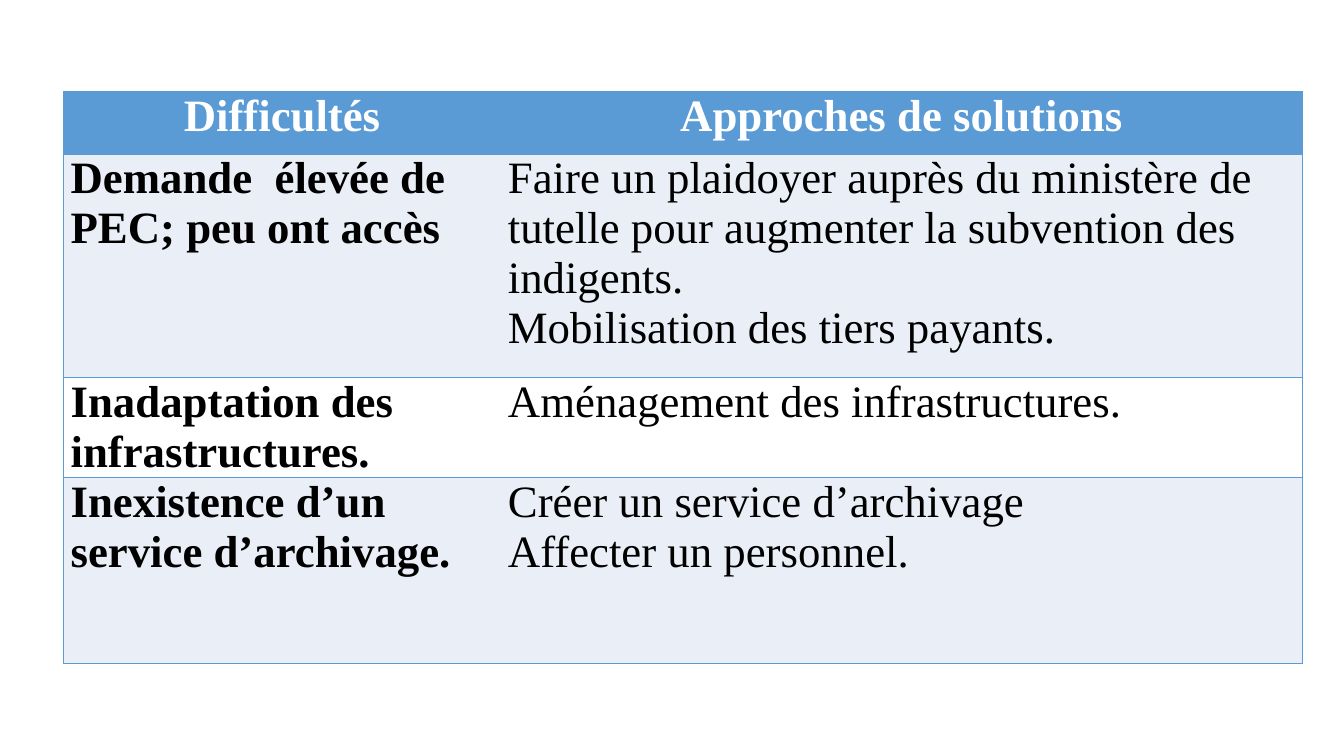
from lxml import etree
from pptx import Presentation
from pptx.dml.color import RGBColor
from pptx.enum.text import PP_ALIGN
from pptx.oxml.ns import qn
from pptx.util import Cm, Pt

CENTER, LEFT = PP_ALIGN.CENTER, PP_ALIGN.LEFT
BLUE, PALE, WHITE, BLACK = "5B9BD5", "EAEFF7", "FFFFFF", "000000"
BLANK_LAYOUT = 6

HEADINGS = ("Difficultés", "Approches de solutions")
DIFFICULTIES = [
    ("Demande  élevée de PEC; peu ont accès",
     "Faire un plaidoyer auprès du ministère de tutelle pour augmenter "
     "la subvention des indigents.\nMobilisation des tiers payants."),
    ("Inadaptation des infrastructures.", "Aménagement des infrastructures."),
    ("Inexistence d’un service d’archivage.",
     "Créer un service d’archivage\nAffecter un personnel."),
]
COLUMN_WIDTHS = (11.02, 20.2)
ROW_HEIGHTS = (1.57, 5.64, 2.51, 4.7)


def color(hex_value):
    return RGBColor.from_string(hex_value)


def apply(target, values):
    for name, value in values.items():
        setattr(target, name, value)


class SlideBuilder:
    font = {"name": "Times New Roman", "size": Pt(32)}
    margins = {"margin_left": Cm(0.18), "margin_right": Cm(0.18),
               "margin_top": 0, "margin_bottom": 0}

    def __init__(self, slide):
        self.slide = slide

    def table(self, left, top, widths, heights, rows):
        frame = self.slide.shapes.add_table(
            len(rows), len(widths), Cm(left), Cm(top), Cm(sum(widths)), Cm(sum(heights)))
        grid = frame.table
        grid.horz_banding = False
        for column, width in zip(grid.columns, widths):
            column.width = Cm(width)
        for row, height in zip(grid.rows, heights):
            row.height = Cm(height)
        last = len(widths) - 1
        for r, texts in enumerate(rows):
            for c, text in enumerate(texts):
                cell = grid.cell(r, c)
                self.cell(cell, text, header=r == 0, bold=r == 0 or c == 0,
                          fill=BLUE if r == 0 else PALE if r % 2 else WHITE)
                self.borders(cell, {"L": c == 0, "R": c == last, "T": True, "B": True})

    def cell(self, cell, text, header, bold, fill):
        apply(cell, {"text": text, **self.margins})
        cell.fill.solid()
        cell.fill.fore_color.rgb = color(fill)
        for paragraph in cell.text_frame.paragraphs:
            paragraph.alignment = CENTER if header else LEFT
            for run in paragraph.runs:
                apply(run.font, {"bold": bold, **self.font})
                run.font.color.rgb = color(WHITE if header else BLACK)

    def borders(self, cell, sides):
        properties = cell._tc.get_or_add_tcPr()
        for position, (side, visible) in enumerate(sides.items()):
            line = etree.Element(qn(f"a:ln{side}"), w=str(Pt(1)))
            if visible:
                paint = etree.SubElement(line, qn("a:solidFill"))
                etree.SubElement(paint, qn("a:srgbClr"), val=BLUE)
            else:
                etree.SubElement(line, qn("a:noFill"))
            properties.insert(position, line)


def main():
    deck = Presentation()
    apply(deck, {"slide_width": Cm(33.87), "slide_height": Cm(19.05)})
    builder = SlideBuilder(deck.slides.add_slide(deck.slide_layouts[BLANK_LAYOUT]))
    builder.table(1.6, 2.31, COLUMN_WIDTHS, ROW_HEIGHTS, [HEADINGS, *DIFFICULTIES])
    deck.save("out.pptx")


if __name__ == "__main__":
    main()
